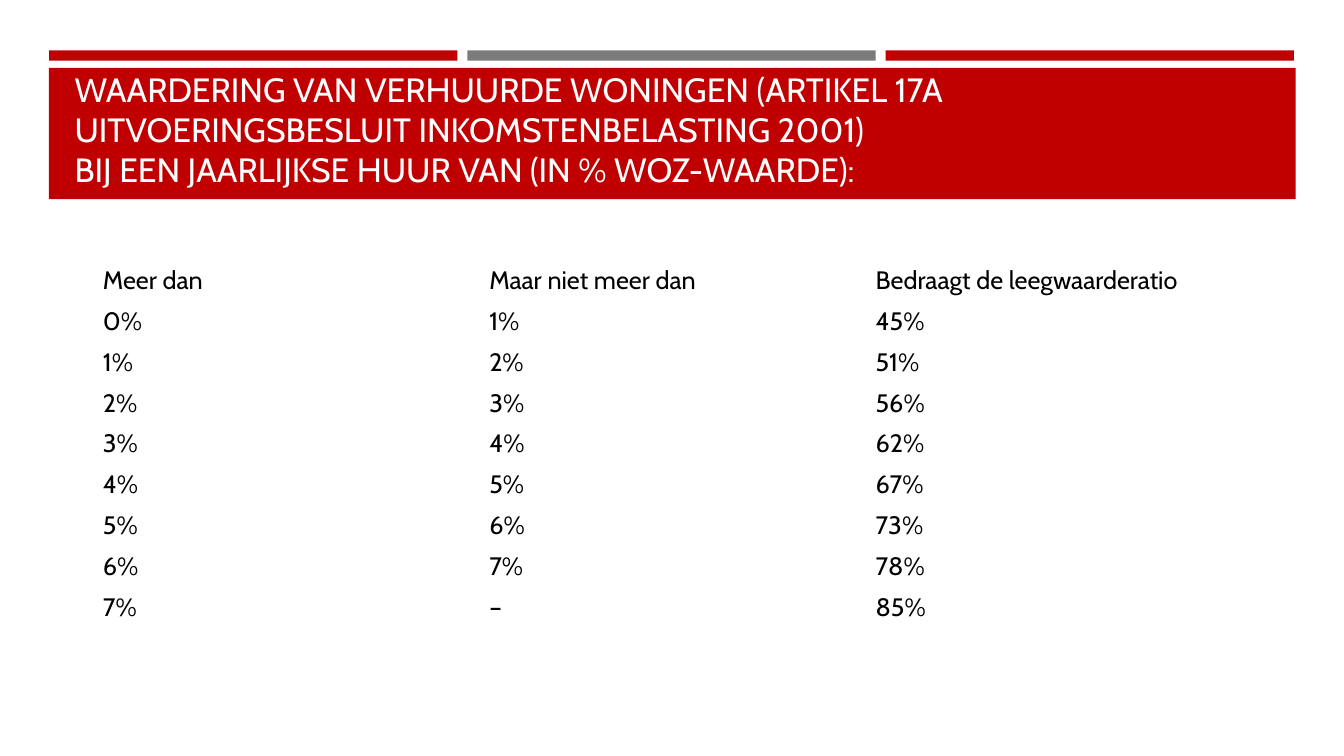
from pptx import Presentation
from pptx import util as u
from pptx.dml.color import RGBColor
from pptx.enum import shapes, text

FONT = "Cabin"
RED, GREY, WHITE, BLACK = "C00000", "7B7B7B", "FFFFFF", "000000"

TITLE_LINES = [
    "WAARDERING VAN VERHUURDE WONINGEN (ARTIKEL 17A UITVOERINGSBESLUIT INKOMSTENBELASTING 2001)",
    "BIJ EEN JAARLIJKSE HUUR VAN (IN % WOZ-WAARDE):",
]
HEADINGS = ["Meer dan", "Maar niet meer dan", "Bedraagt de leegwaarderatio"]
RATIOS = [45, 51, 56, 62, 67, 73, 78, 85]


def color(value):
    return RGBColor.from_string(value)


def add_run(paragraph, content, size, font_color):
    run = paragraph.add_run()
    run.text = content
    run.font.name = FONT
    run.font.size = u.Pt(size)
    run.font.color.rgb = color(font_color)


def add_bar(slide, left, top, width, height, fill):
    shape = slide.shapes.add_shape(
        shapes.MSO_SHAPE.RECTANGLE, u.Cm(left), u.Cm(top), u.Cm(width), u.Cm(height))
    shape.shadow.inherit = False
    shape.fill.solid()
    shape.fill.fore_color.rgb = color(fill)
    shape.line.fill.background()


def add_title(slide, lines):
    box = slide.shapes.add_textbox(u.Cm(1.63), u.Cm(2.08), u.Cm(30.63), u.Cm(2.82))
    frame = box.text_frame
    frame.word_wrap = True
    frame.vertical_anchor = text.MSO_ANCHOR.BOTTOM
    paragraph = frame.paragraphs[0]
    for index, line in enumerate(lines):
        if index:
            paragraph.add_line_break()
        add_run(paragraph, line, 24, WHITE)


def add_plain_table(slide, rows):
    frame = slide.shapes.add_table(
        len(rows), len(rows[0]), u.Cm(2.34), u.Cm(6.55), u.Cm(29.21), u.Cm(1.03 * len(rows)))
    table = frame.table
    table.first_row = table.horz_banding = False
    for row_index, row in enumerate(rows):
        for column_index, content in enumerate(row):
            cell = table.cell(row_index, column_index)
            cell.fill.background()
            cell.vertical_anchor = text.MSO_ANCHOR.MIDDLE
            add_run(cell.text_frame.paragraphs[0], content, 18, BLACK)


def main():
    presentation = Presentation()
    presentation.slide_width, presentation.slide_height = u.Cm(33.87), u.Cm(19.05)
    slide = presentation.slides.add_slide(presentation.slide_layouts[6])

    # Three accent bars above the title band
    for index, fill in enumerate([RED, GREY, RED]):
        add_bar(slide, 1.24 + index * 10.54, 1.27, 10.29, 0.26, fill)

    # Title band
    add_bar(slide, 1.23, 1.71, 31.42, 3.31, RED)
    add_title(slide, TITLE_LINES)

    # Ratio per rent bracket; the last bracket has no upper limit
    last = len(RATIOS) - 1
    brackets = [[f"{lower}%", f"{lower + 1}%" if lower < last else "–", f"{ratio}%"]
                for lower, ratio in enumerate(RATIOS)]
    add_plain_table(slide, [HEADINGS] + brackets)

    presentation.save("out.pptx")


if __name__ == "__main__":
    main()
